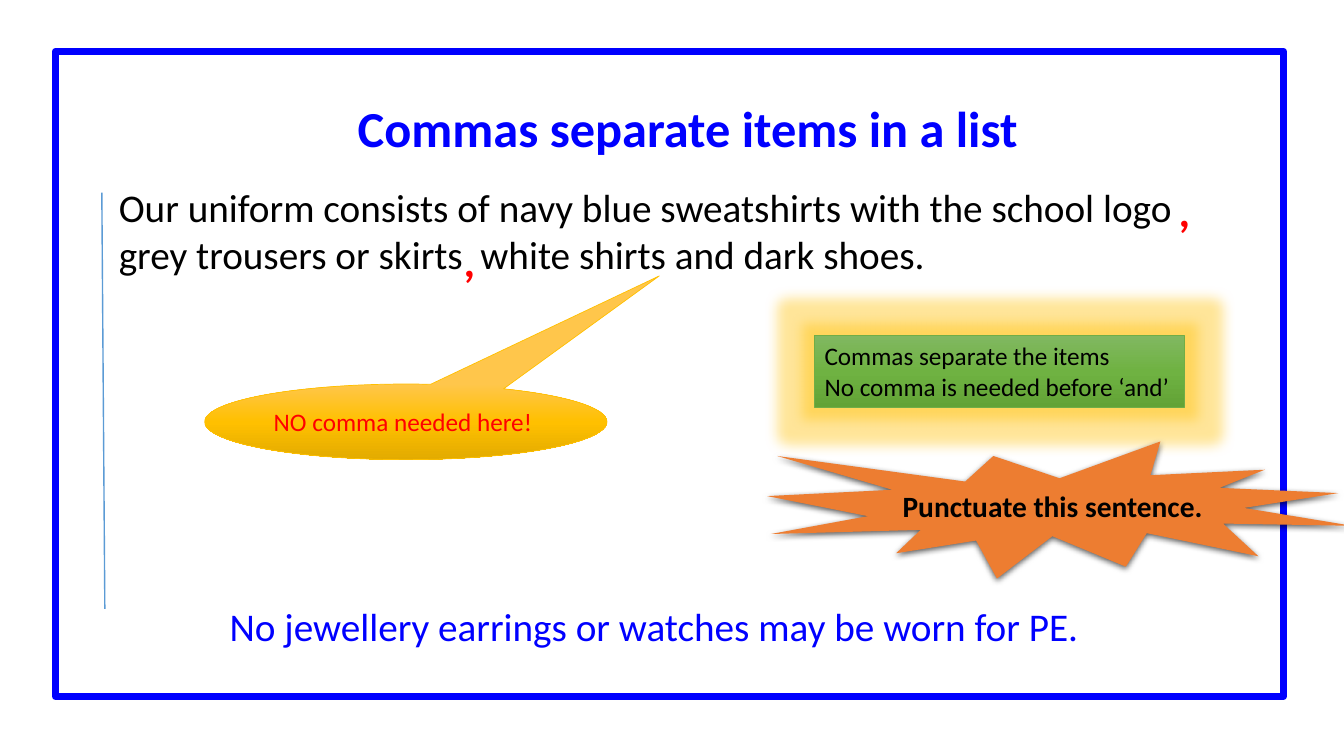
from dataclasses import dataclass

from lxml import etree
from pptx import Presentation
from pptx.dml.color import RGBColor
from pptx.enum.shapes import MSO_CONNECTOR, MSO_SHAPE
from pptx.enum.text import MSO_ANCHOR, MSO_AUTO_SIZE, PP_ALIGN
from pptx.oxml.ns import qn
from pptx.util import Inches, Pt

RECT = MSO_SHAPE.RECTANGLE
BUBBLE = MSO_SHAPE.OVAL_CALLOUT
BURST = MSO_SHAPE.EXPLOSION1
LINE = MSO_CONNECTOR.STRAIGHT
MIDDLE, TOP = MSO_ANCHOR.MIDDLE, MSO_ANCHOR.TOP
CENTER, LEFT = PP_ALIGN.CENTER, PP_ALIGN.LEFT
GROW = MSO_AUTO_SIZE.SHAPE_TO_FIT_TEXT


@dataclass(frozen=True)
class Theme:
    font: str = "Calibri"
    blue: str = "0000FF"
    red: str = "FF0000"
    black: str = "000000"
    rule: str = "5B9BD5"
    gold: str = "FFC000"
    green: str = "70AD47"
    orange: str = "ED7D31"
    golds: tuple = ("FFC64B", "FFC000", "E3AB00")
    greens: tuple = ("81B861", "6FB242", "62A336")
    title: int = 36
    comma: int = 32
    body: int = 28
    burst: int = 21
    note: int = 18


class Board:
    def __init__(self, slide, theme):
        self.slide = slide
        self.theme = theme

    def label(self, shape, text, size, color, bold=False, align=LEFT, anchor=TOP, wrap=True):
        frame = shape.text_frame
        frame.text = text
        frame.word_wrap = wrap
        frame.vertical_anchor = anchor
        for para in frame.paragraphs:
            para.alignment = align
            for run in para.runs:
                self.style(run, size, color, bold)

    def style(self, run, size, color, bold=False):
        run.font.name = self.theme.font
        run.font.size = Pt(size)
        run.font.bold = bold
        run.font.color.rgb = RGBColor.from_string(color)

    def text(self, box, text, size, color, **look):
        shape = self.slide.shapes.add_textbox(*map(Inches, box))
        self.label(shape, text, size, color, **look)
        shape.text_frame.auto_size = GROW
        return shape.text_frame.paragraphs[0]

    def shape(self, kind, box, fill=None, line=None, width=0.5):
        shape = self.slide.shapes.add_shape(kind, *map(Inches, box))
        shape.shadow.inherit = False
        if isinstance(fill, tuple):
            self.blend(shape, fill)
        elif fill:
            shape.fill.solid()
            shape.fill.fore_color.rgb = RGBColor.from_string(fill)
        else:
            shape.fill.background()
        if line:
            shape.line.color.rgb = RGBColor.from_string(line)
            shape.line.width = Pt(width)
        else:
            shape.line.fill.background()
        return shape

    def blend(self, shape, colors):
        shape.fill.gradient()
        shape.fill.gradient_angle = 270
        stops = shape._element.spPr.find(qn("a:gradFill")).find(qn("a:gsLst"))
        for stop in list(stops):
            stops.remove(stop)
        for place, color in zip((0, 50000, 100000), colors):
            stop = etree.SubElement(stops, qn("a:gs"), pos=str(place))
            etree.SubElement(stop, qn("a:srgbClr"), val=color)

    def effect(self, shape, name, color, alpha, **attrs):
        group = shape._element.spPr.find(qn("a:effectLst"))
        node = etree.SubElement(group, qn(f"a:{name}"), **attrs)
        tint = etree.SubElement(node, qn("a:srgbClr"), val=color)
        etree.SubElement(tint, qn("a:alpha"), val=str(alpha * 1000))

    def line(self, start, end, color, width):
        line = self.slide.shapes.add_connector(LINE, *map(Inches, start + end))
        line.line.color.rgb = RGBColor.from_string(color)
        line.line.width = Pt(width)
        etree.SubElement(line._element.spPr, qn("a:effectLst"))


def main():
    deck = Presentation()
    deck.slide_width, deck.slide_height = Inches(13.33), Inches(7.5)
    look = Theme()
    board = Board(deck.slides.add_slide(deck.slide_layouts[6]), look)

    title = board.text((0.86, 0.91, 11.56, 0.71), "Commas separate items in a list",
                       look.title, look.blue, bold=True)
    title._p.get_or_add_pPr().set("marL", str(Inches(2.59)))
    board.shape(RECT, (0.55, 0.51, 12.18, 6.4), line=look.blue, width=5)

    body = board.text((1.08, 1.77, 11.31, 1.04),
                      "Our uniform consists of navy blue sweatshirts with the school logo "
                      "grey trousers or skirts", look.body, look.black)
    for part in (" ", "white shirts and dark shoes."):
        run = body.add_run()
        run.text = part
        board.style(run, look.body, look.black)
    body.runs[1]._r.get_or_add_rPr().set("spc", "630")

    board.line((1.01, 1.91), (1.04, 6.04), look.rule, 1)
    for left, top in ((4.5, 2.26), (11.59, 1.76)):
        board.text((left, top, 0.32, 0.64), ",", look.comma, look.red, bold=True, wrap=False)

    bubble = board.shape(BUBBLE, (2.03, 3.81, 3.99, 0.75), look.golds, look.gold)
    bubble.adjustments[0], bubble.adjustments[1] = 0.63, -1.93
    board.label(bubble, "NO comma needed here! ", look.note, look.red,
                align=CENTER, anchor=MIDDLE)

    rules = board.shape(RECT, (8.08, 3.33, 3.67, 0.71), look.greens, look.green)
    board.effect(rules, "glow", look.gold, 40, rad=str(Pt(18)))
    board.label(rules, "Commas separate the items\nNo comma is needed before ‘and’",
                look.note, look.black, wrap=False)
    rules.text_frame.auto_size = GROW

    task = board.text((2.18, 5.79, 10.15, 0.66),
                      "No jewellery earrings or watches may be worn for PE.",
                      look.body, look.blue)
    task.line_spacing = 1.3

    burst = board.shape(BURST, (7.61, 4.38, 5.8, 1.36), look.orange)
    board.effect(burst, "outerShdw", look.black, 63, blurRad=str(Pt(4.5)),
                 dist=str(Pt(1.5)), dir="5400000", algn="ctr", rotWithShape="0")
    board.label(burst, "Punctuate this sentence. ", look.burst, look.black,
                bold=True, align=CENTER, anchor=MIDDLE)

    deck.save("out.pptx")


if __name__ == "__main__":
    main()
